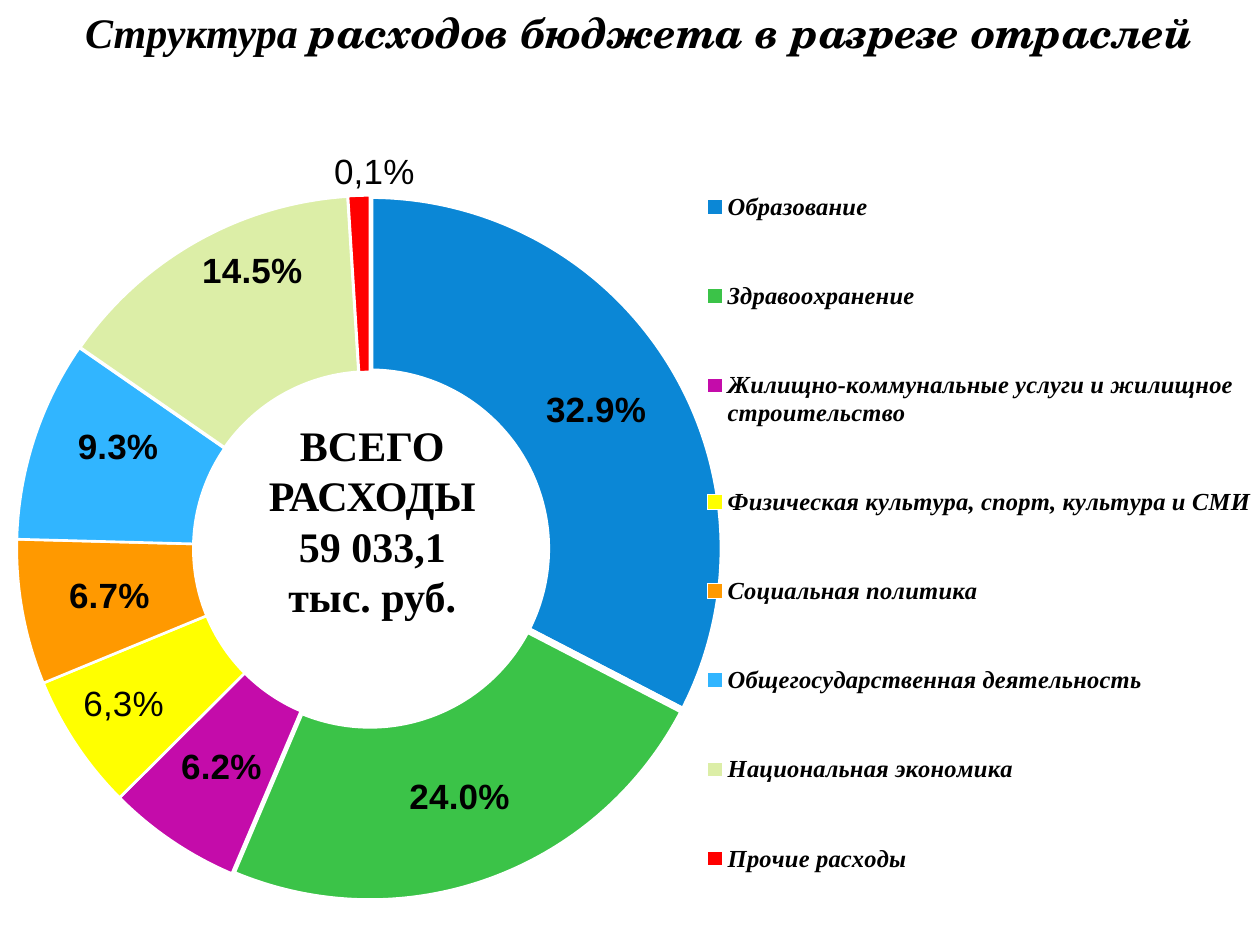
from pptx import Presentation
from pptx.chart.data import CategoryChartData
from pptx.dml.color import RGBColor
from pptx.enum.chart import XL_CHART_TYPE, XL_LEGEND_POSITION
from pptx.enum.text import MSO_AUTO_SIZE, PP_ALIGN
from pptx.oxml import parse_xml
from pptx.oxml.ns import nsdecls, qn
from pptx.util import Inches, Pt

THEME = {
    "ink": "000000",
    "gap": "FFFFFF",
    "heading": {"name": "Times New Roman", "size": Pt(24), "bold": True},
    "legend": {"name": "Times New Roman", "size": Pt(14), "bold": True, "italic": True},
    "label": {"name": "Arial", "size": Pt(20), "bold": True},
    "custom": {"name": "Arial", "size": Pt(20), "bold": False},
    "chart": {"name": "Calibri", "size": Pt(18)},
}
SECTORS = [
    ("Образование", 0.329, "0B87D6"),
    ("Здравоохранение", 0.24, "3BC348"),
    ("Жилищно-коммунальные услуги и жилищное строительство", 0.062, "C40CAA"),
    ("Физическая культура, спорт, культура и СМИ", 0.063, "FFFF00"),
    ("Социальная политика", 0.067, "FF9900"),
    ("Общегосударственная деятельность", 0.093, "31B5FF"),
    ("Национальная экономика", 0.145, "DCEEA7"),
    ("Прочие расходы", 0.01, "FF0000"),
]
GAP_WIDTHS = [4, 4, 1.5, 1.5, 1.5, 1.5, 2, 1.5]
MOVED_LABELS = {
    3: ("6,3%", -0.02, 0.01),
    5: (None, 0, -0.02),
    6: (None, 0.01, -0.05),
    7: ("0,1%", 0.01, -0.12),
}
TITLE = [
    ("Структура", {"italic": True}),
    (" расходов бюджета в разрезе отраслей", {"italic": True, "name": "TeX Gyre Schola"}),
]
TOTAL = ["ВСЕГО РАСХОДЫ", "59 033,1", "тыс. руб."]


def style(font, values):
    for key, value in values.items():
        setattr(font, key, value)
    font.color.rgb = RGBColor.from_string(THEME["ink"])


def place(element, index, **parts):
    for old in element.findall(qn("c:layout")):
        element.remove(old)
    inner = "".join(f'<c:{key} val="{value}"/>' for key, value in parts.items())
    element.insert(index, parse_xml(
        f'<c:layout {nsdecls("c")}><c:manualLayout>{inner}</c:manualLayout></c:layout>'))


def add_text(page, frame, paragraphs):
    box = page.shapes.add_textbox(*map(Inches, frame))
    text = box.text_frame
    text.word_wrap = True
    text.auto_size = MSO_AUTO_SIZE.SHAPE_TO_FIT_TEXT
    for number, runs in enumerate(paragraphs):
        para = text.add_paragraph() if number else text.paragraphs[0]
        para.alignment = PP_ALIGN.CENTER
        for words, extra in runs:
            span = para.add_run()
            span.text = words
            style(span.font, {**THEME["heading"], **extra})


def add_ring(page):
    names, shares, colours = zip(*SECTORS)
    data = CategoryChartData()
    data.categories = names
    data.add_series("Расходы", shares, "0.0%")
    chart = page.shapes.add_chart(
        XL_CHART_TYPE.DOUGHNUT, *map(Inches, (-0.12, 0.68, 10.12, 7.32)), data).chart
    style(chart.font, THEME["chart"])
    chart.has_title = False
    chart.has_legend = True
    chart.legend.position = XL_LEGEND_POSITION.RIGHT
    chart.legend.include_in_layout = False
    style(chart.legend.font, THEME["legend"])

    plot = chart.plots[0]
    plot.vary_by_categories = True
    series = plot.series[0]
    labels = series.data_labels
    labels.show_value = True
    labels.show_percentage = False
    labels.number_format = "0.0%"
    labels.number_format_is_linked = False
    style(labels.font, THEME["label"])

    for number, (colour, width) in enumerate(zip(colours, GAP_WIDTHS)):
        form = series.points[number].format
        form.fill.solid()
        form.fill.fore_color.rgb = RGBColor.from_string(colour)
        form.line.color.rgb = RGBColor.from_string(THEME["gap"])
        form.line.width = Pt(width)

    for number, (words, across, down) in MOVED_LABELS.items():
        label = series.points[number].data_label
        if words:
            span = label.text_frame.paragraphs[0].add_run()
            span.text = words
            style(span.font, THEME["custom"])
        else:
            style(label.font, THEME["label"])
    for item in labels._element.findall(qn("c:dLbl")):
        words, across, down = MOVED_LABELS[int(item.find(qn("c:idx")).get("val"))]
        place(item, 1, x=across, y=down)

    area = chart._chartSpace.chart.plotArea
    area.find(".//" + qn("c:holeSize")).set("val", "50")
    place(area, 0, layoutTarget="inner", xMode="edge", yMode="edge",
          x=0.025, y=0.089, w=0.554, h=0.826)
    place(chart.legend._element, 1, xMode="edge", yMode="edge",
          x=0.56, y=0.05, w=0.44, h=0.87)


def main():
    deck = Presentation()
    deck.slide_width, deck.slide_height = Inches(10), Inches(7.5)
    page = deck.slides.add_slide(deck.slide_layouts[6])
    add_ring(page)
    add_text(page, (0.35, 0, 9.45, 0.5), [TITLE])
    add_text(page, (1.54, 3.28, 2.83, 1.72), [[(line, {})] for line in TOTAL])
    deck.save("out.pptx")


if __name__ == "__main__":
    main()
